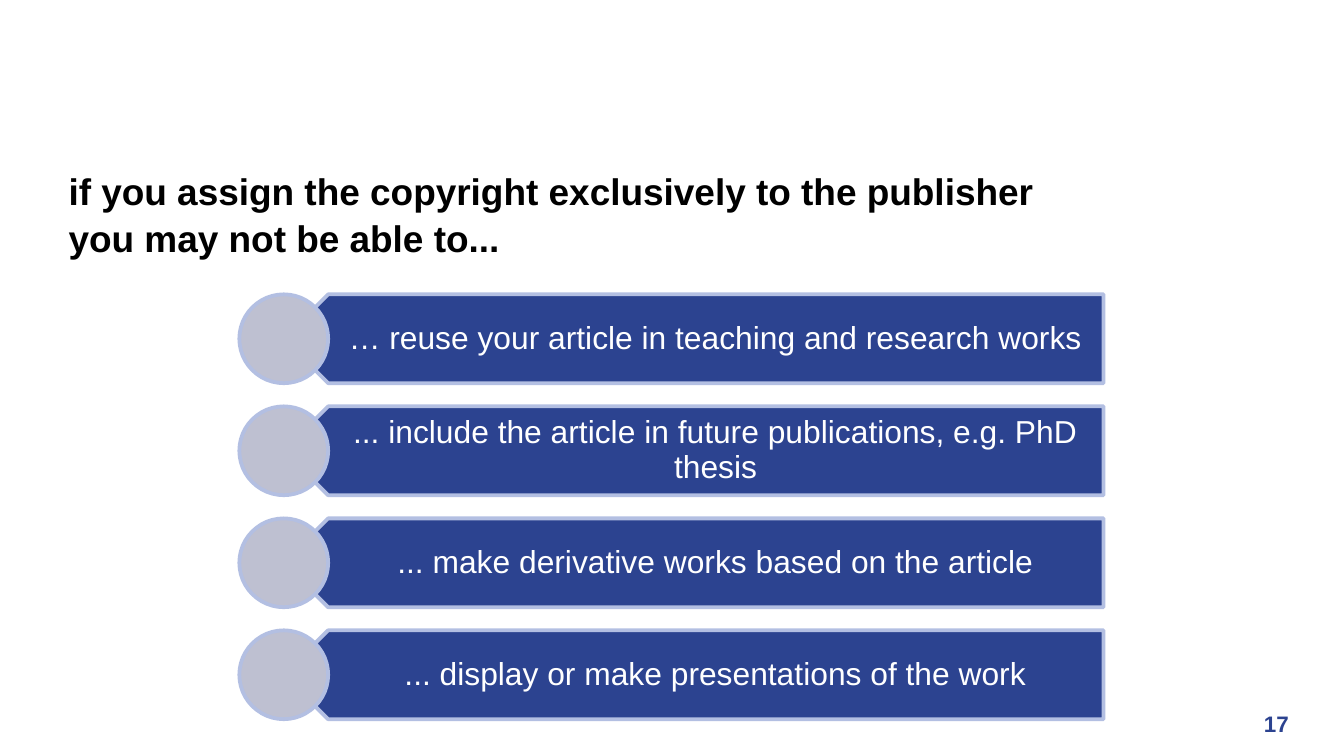
from copy import deepcopy

from pptx import Presentation
from pptx.dml.color import RGBColor
from pptx.enum.shapes import MSO_SHAPE
from pptx.enum.text import MSO_ANCHOR, MSO_AUTO_SIZE, PP_ALIGN
from pptx.oxml.ns import qn
from pptx.util import Pt

CONSEQUENCES = [
    "… reuse your article in teaching and research works",
    "... include the article in future publications, e.g. PhD thesis",
    "... make derivative works based on the article",
    "... display or make presentations of the work",
]
ROW_TOP, ROW_PITCH, ROW_HEIGHT = 157.7, 60, 47.6
CIRCLE_LEFT, BAR_RIGHT = 128.2, 591.2


def color(value):
    return RGBColor.from_string(value)


def write_text(shape, text, size, hex_color, bold=False, align=PP_ALIGN.LEFT,
               anchor=MSO_ANCHOR.MIDDLE, insets=(7.2, 3.6, 7.2, 3.6), spacing=1.0):
    """Fill a shape with one paragraph; insets run left, top, right, bottom."""
    frame = shape.text_frame
    frame.word_wrap = True
    frame.auto_size = MSO_AUTO_SIZE.NONE
    frame.vertical_anchor = anchor
    (frame.margin_left, frame.margin_top,
     frame.margin_right, frame.margin_bottom) = map(Pt, insets)
    paragraph = frame.paragraphs[0]
    paragraph.text = text
    paragraph.alignment = align
    paragraph.line_spacing = spacing
    paragraph.space_before = Pt(0)
    for run in paragraph.runs:
        run.font.name = "Arial"
        run.font.size = Pt(size)
        run.font.bold = bold
        run.font.color.rgb = color(hex_color)
    # A line break needs the run format too, or it takes the layout's size.
    for line_break in paragraph._p.findall(qn("a:br")):
        line_break.append(deepcopy(paragraph.runs[0]._r.rPr))


class SlideBuilder:
    BLUE, OUTLINE, GREY = "2C4390", "B3BFE2", "BEC0D1"

    def __init__(self, presentation):
        self.slide = presentation.slides.add_slide(presentation.slide_layouts[5])

    def paint(self, shape, fill):
        shape.shadow.inherit = False
        shape.fill.solid()
        shape.fill.fore_color.rgb = color(fill)
        shape.line.color.rgb = color(self.OUTLINE)
        shape.line.width = Pt(2)

    def title(self, text, left, top, width, height):
        title = self.slide.shapes.title
        title.left, title.top, title.width, title.height = map(
            Pt, (left, top, width, height))
        write_text(title, text, 19.8, "000000", bold=True,
                   anchor=MSO_ANCHOR.TOP, spacing=1.06)

    def row(self, group, text, top):
        """Add a bar pointing left, with a circle over its tip."""
        middle, bottom = top + ROW_HEIGHT / 2, top + ROW_HEIGHT
        tip = CIRCLE_LEFT + ROW_HEIGHT / 2
        shoulder = CIRCLE_LEFT + ROW_HEIGHT
        outline = [(shoulder, bottom), (tip, middle), (shoulder, top), (BAR_RIGHT, top)]
        builder = group.shapes.build_freeform(Pt(BAR_RIGHT), Pt(bottom))
        builder.add_line_segments([(Pt(x), Pt(y)) for x, y in outline], close=True)
        bar = builder.convert_to_shape()
        self.paint(bar, self.BLUE)
        write_text(bar, text, 17, "FFFFFF", align=PP_ALIGN.CENTER,
                   insets=(33, 5, 9.4, 5), spacing=0.9)
        circle = group.shapes.add_shape(
            MSO_SHAPE.OVAL, Pt(CIRCLE_LEFT), Pt(top), Pt(ROW_HEIGHT), Pt(ROW_HEIGHT))
        self.paint(circle, self.GREY)

    def list_rows(self, texts):
        group = self.slide.shapes.add_group_shape()
        for index, text in enumerate(texts):
            self.row(group, text, ROW_TOP + index * ROW_PITCH)

    def page_number(self, text, left, top, width, height):
        box = self.slide.shapes.add_textbox(*map(Pt, (left, top, width, height)))
        write_text(box, text, 12, self.BLUE, bold=True, align=PP_ALIGN.RIGHT,
                   insets=(7.2, 3.6, 0, 3.6))


def main():
    presentation = Presentation()
    presentation.slide_width, presentation.slide_height = Pt(720), Pt(405)
    builder = SlideBuilder(presentation)
    builder.title("if you assign the copyright exclusively to the publisher\v"
                  "you may not be able to...", 29.5, 85, 661, 49)
    builder.list_rows(CONSEQUENCES)
    builder.page_number("17", 651, 376.6, 39.5, 21.6)
    presentation.save("out.pptx")


if __name__ == "__main__":
    main()
